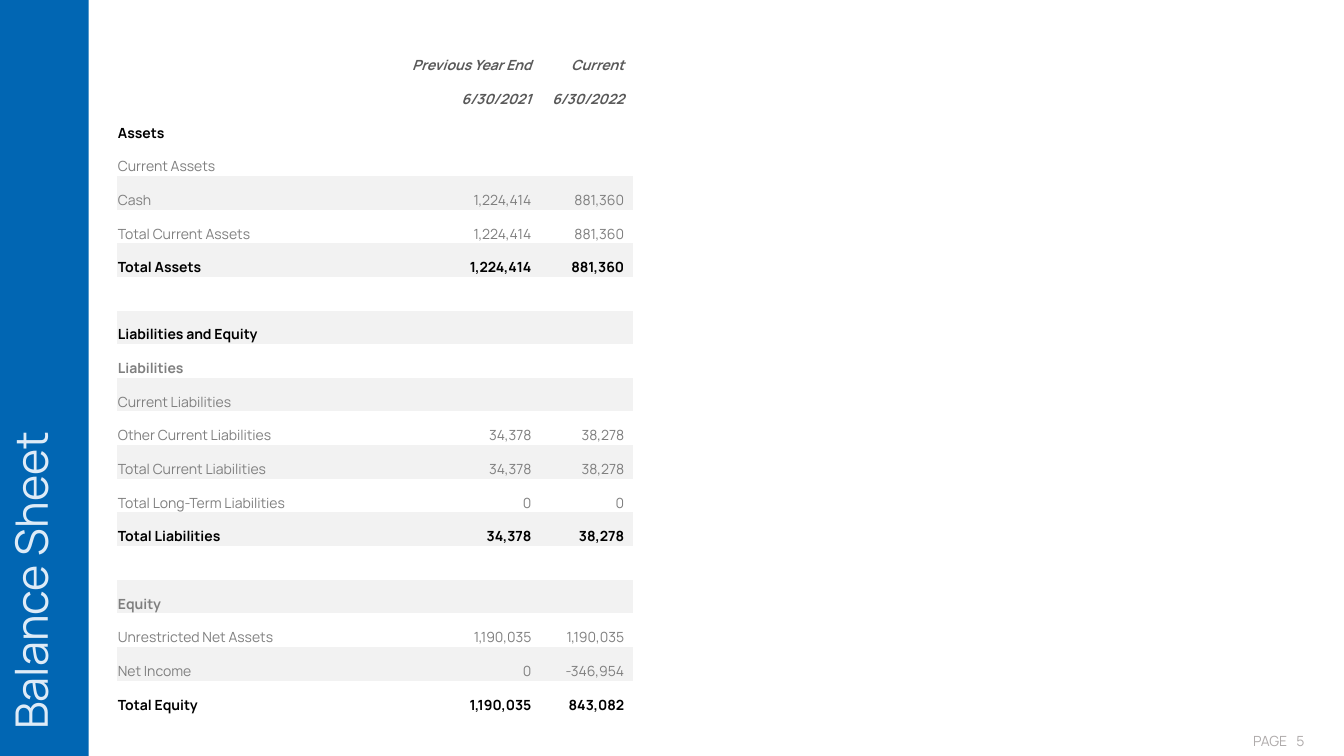
from pptx import Presentation
from pptx.dml.color import RGBColor
from pptx.enum.shapes import MSO_SHAPE
from pptx.enum.text import MSO_ANCHOR, MSO_AUTO_SIZE, PP_ALIGN
from pptx.oxml.ns import qn
from pptx.util import Inches, Pt

RECTANGLE = MSO_SHAPE.RECTANGLE
LEFT, RIGHT = PP_ALIGN.LEFT, PP_ALIGN.RIGHT
TOP, BOTTOM = MSO_ANCHOR.TOP, MSO_ANCHOR.BOTTOM
NO_AUTOFIT = MSO_AUTO_SIZE.NONE

BLUE = RGBColor(0x01, 0x66, 0xB3)
PALE_BLUE = RGBColor(0xDE, 0xEB, 0xF7)
BLACK = RGBColor(0x00, 0x00, 0x00)
DARK_GREY = RGBColor(0x59, 0x59, 0x59)
GREY = RGBColor(0x7F, 0x7F, 0x7F)
PAGE_GREY = RGBColor(0xAF, 0xAB, 0xAB)
BAND_GREY = RGBColor(0xF2, 0xF2, 0xF2)

FONT = "Manrope"
NO_STYLE_NO_GRID = "{2D5ABB26-0587-4C30-8999-92F81FD0307C}"

HEADER = {"bold": True, "italic": True, "color": DARK_GREY}
TOTAL = {"bold": True, "color": BLACK}
GROUP = {"bold": True, "color": GREY}
DETAIL = {"bold": False, "color": GREY}

TITLE = "Balance Sheet"
ROWS = [
    (HEADER, "", "Previous Year End", "Current"),
    (HEADER, "", "6/30/2021", "6/30/2022"),
    (TOTAL, "Assets", "", ""),
    (DETAIL, "Current Assets", "", ""),
    (DETAIL, "Cash", "1,224,414", "881,360"),
    (DETAIL, "Total Current Assets", "1,224,414", "881,360"),
    (TOTAL, "Total Assets", "1,224,414", "881,360"),
    (DETAIL, "", "", ""),
    (TOTAL, "Liabilities and Equity", "", ""),
    (GROUP, "Liabilities", "", ""),
    (DETAIL, "Current Liabilities", "", ""),
    (DETAIL, "Other Current Liabilities", "34,378", "38,278"),
    (DETAIL, "Total Current Liabilities", "34,378", "38,278"),
    (DETAIL, "Total Long-Term Liabilities", "0", "0"),
    (TOTAL, "Total Liabilities", "34,378", "38,278"),
    (DETAIL, "", "", ""),
    (GROUP, "Equity", "", ""),
    (DETAIL, "Unrestricted Net Assets", "1,190,035", "1,190,035"),
    (DETAIL, "Net Income", "0", "-346,954"),
    (TOTAL, "Total Equity", "1,190,035", "843,082"),
]
FIRST_BAND = 4
COLUMN_WIDTHS = (2.5, 1.7, 0.92)
TABLE_LEFT, TABLE_TOP, TABLE_HEIGHT = 1.16, 0.41, 6.68
PAGE_LABELS = [("PAGE", 12.33, 0.57), ("5", 12.76, 0.43)]
SLIDE_WIDTH, SLIDE_HEIGHT, SIDEBAR_WIDTH = 13.33, 7.5, 0.88


def set_attributes(target, values):
    for name, value in values.items():
        setattr(target, name, value)


def write(text_frame, text, size, color, alignment=LEFT, **font_values):
    paragraph = text_frame.paragraphs[0]
    paragraph.alignment = alignment
    run = paragraph.add_run()
    run.text = text
    run.font.color.rgb = color
    set_attributes(run.font, {"name": FONT, "size": Pt(size), **font_values})


def add_sidebar(slide):
    """Draw the full-height bar whose title reads from bottom to top."""
    sidebar = slide.shapes.add_shape(RECTANGLE, 0, 0, Inches(SIDEBAR_WIDTH),
                                     Inches(SLIDE_HEIGHT))
    sidebar.shadow.inherit = False
    sidebar.fill.solid()
    sidebar.fill.fore_color.rgb = BLUE
    sidebar.line.fill.background()
    frame = sidebar.text_frame
    set_attributes(frame, {"auto_size": NO_AUTOFIT, "vertical_anchor": TOP,
                           "margin_bottom": Inches(0.26), "margin_top": 0,
                           "margin_left": Inches(0.03), "margin_right": 0})
    frame._txBody.bodyPr.set("vert", "vert270")
    write(frame, TITLE, 32, PALE_BLUE)


def add_balance_table(slide):
    table_frame = slide.shapes.add_table(
        len(ROWS), len(COLUMN_WIDTHS), Inches(TABLE_LEFT), Inches(TABLE_TOP),
        Inches(sum(COLUMN_WIDTHS)), Inches(TABLE_HEIGHT))
    table = table_frame.table
    set_attributes(table, {"first_row": False, "horz_banding": False})
    table._tbl.tblPr.find(qn("a:tableStyleId")).text = NO_STYLE_NO_GRID
    for column, width in zip(table.columns, COLUMN_WIDTHS):
        column.width = Inches(width)
    for row_index, (style, *texts) in enumerate(ROWS):
        banded = row_index >= FIRST_BAND and row_index % 2 == 0
        for column_index, text in enumerate(texts):
            is_value = column_index > 0
            cell = table.cell(row_index, column_index)
            set_attributes(cell, {
                "vertical_anchor": BOTTOM, "margin_left": Inches(0.01),
                "margin_right": Inches(0.09 if is_value else 0.01),
                "margin_top": Inches(0.01), "margin_bottom": 0})
            if banded:
                cell.fill.solid()
                cell.fill.fore_color.rgb = BAND_GREY
            else:
                cell.fill.background()
            if text:
                write(cell.text_frame, text, 10,
                      alignment=RIGHT if is_value else LEFT, **style)


def add_page_labels(slide):
    for text, left, width in PAGE_LABELS:
        box = slide.shapes.add_textbox(Inches(left), Inches(7.22),
                                       Inches(width), Inches(0.27))
        write(box.text_frame, text, 10, PAGE_GREY)


def main():
    presentation = Presentation()
    set_attributes(presentation, {"slide_width": Inches(SLIDE_WIDTH),
                                  "slide_height": Inches(SLIDE_HEIGHT)})
    blank_layout = presentation.slide_layouts[6]
    slide = presentation.slides.add_slide(blank_layout)
    add_page_labels(slide)
    add_sidebar(slide)
    add_balance_table(slide)
    presentation.save("out.pptx")


if __name__ == "__main__":
    main()
